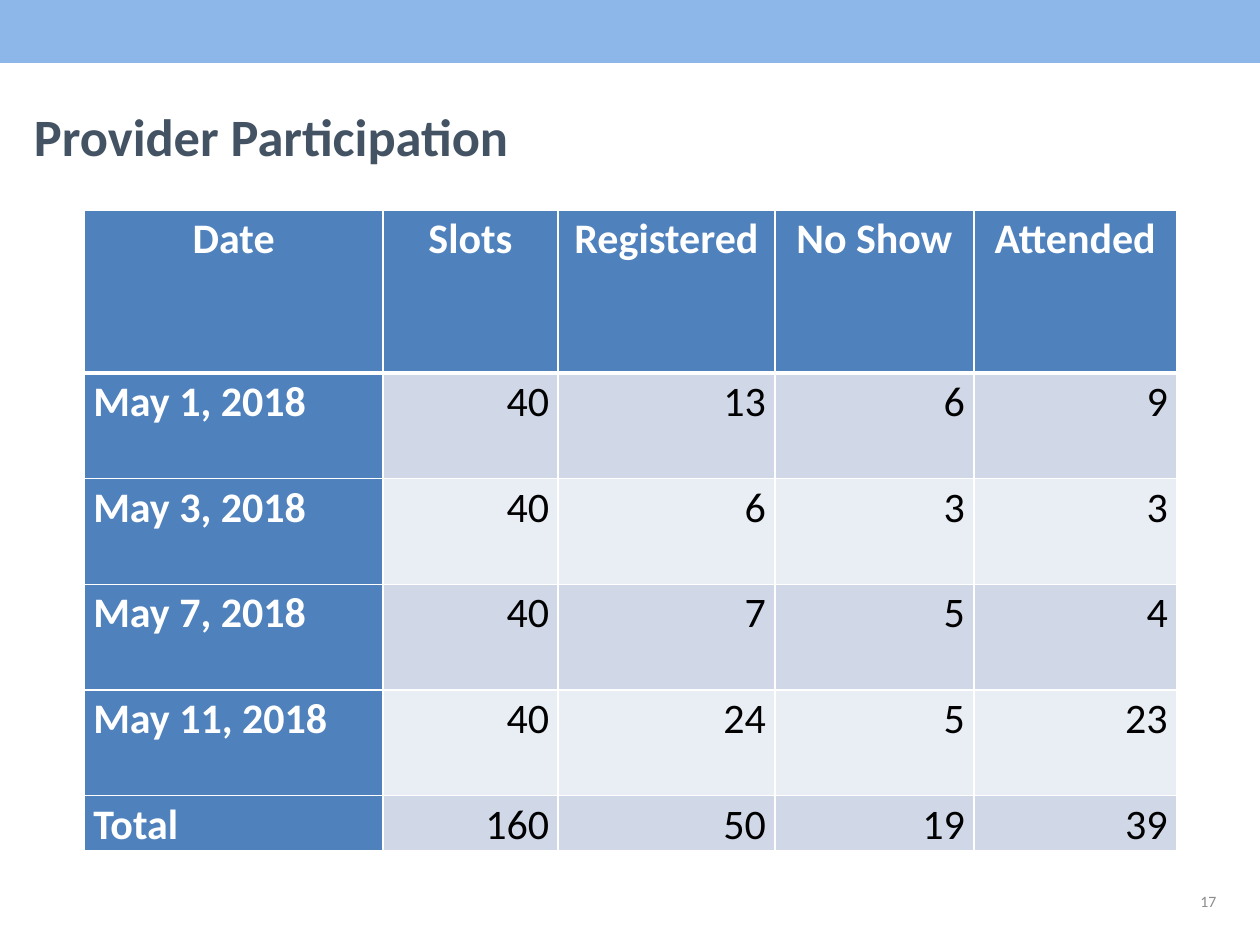
from dataclasses import dataclass

from lxml.etree import SubElement
from pptx import Presentation
from pptx.dml.color import RGBColor
from pptx.enum.shapes import MSO_SHAPE as Shape
from pptx.enum.text import MSO_ANCHOR as Anchor, PP_ALIGN as Align
from pptx.oxml.ns import qn
from pptx.util import Cm, Pt

FONT = "Calibri"
WHITE, BLACK, BLUE = "FFFFFF", "000000", "4F81BD"
BANDS = ("D0D8E8", "E9EDF4")
COL_WIDTHS = (6.02, 3.53, 4.37, 4.01, 4.09)
ROW_HEIGHTS = (3.28, 2.13, 2.13, 2.13, 2.13, 1.09)
ROWS = (
    ("Date", "Slots", "Registered", "No Show", "Attended"),
    ("May 1, 2018", 40, 13, 6, 9),
    ("May 3, 2018", 40, 6, 3, 3),
    ("May 7, 2018", 40, 7, 5, 4),
    ("May 11, 2018", 40, 24, 5, 23),
    ("Total", 160, 50, 19, 39),
)


@dataclass(frozen=True)
class TextStyle:
    size: float
    color: str
    bold: bool = False
    align: Align = Align.LEFT


@dataclass(frozen=True)
class CellStyle:
    text: TextStyle
    fill: str
    top: float = 1
    bottom: float = 1


def rgb(color: str) -> RGBColor:
    return RGBColor.from_string(color)


def write(tf, text: str, style: TextStyle):
    tf.text = text
    p = tf.paragraphs[0]
    p.alignment = style.align
    p.font.name = FONT
    p.font.size = Pt(style.size)
    p.font.bold = style.bold
    p.font.color.rgb = rgb(style.color)
    return p


def place(sp, left: float, top: float, width: float, height: float) -> None:
    sp.left, sp.top, sp.width, sp.height = map(Cm, (left, top, width, height))


def cell_style(row: int, col: int) -> CellStyle:
    if row == 0:
        return CellStyle(TextStyle(24, WHITE, True, Align.CENTER), BLUE, bottom=3)
    top = 3 if row == 1 else 1
    if col == 0:
        return CellStyle(TextStyle(24, WHITE, True), BLUE, top)
    return CellStyle(TextStyle(24, BLACK, align=Align.RIGHT), BANDS[(row - 1) % 2], top)


def draw_cell(cell, text: str, style: CellStyle) -> None:
    tc_pr = cell._tc.get_or_add_tcPr()
    for side, width in zip("LRTB", (1, 1, style.top, style.bottom)):
        ln = SubElement(tc_pr, qn(f"a:ln{side}"), w=str(Pt(width)))
        SubElement(SubElement(ln, qn("a:solidFill")), qn("a:srgbClr"), val=WHITE)
    cell.fill.solid()
    cell.fill.fore_color.rgb = rgb(style.fill)
    cell.margin_left = cell.margin_right = Cm(0.18)
    cell.margin_top = cell.margin_bottom = 0
    cell.vertical_anchor = Anchor.TOP
    write(cell.text_frame, text, style.text).line_spacing = 1.07


def draw_table(s) -> None:
    table = s.shapes.add_table(
        len(ROWS), len(COL_WIDTHS), Cm(1.7), Cm(4.24),
        Cm(sum(COL_WIDTHS)), Cm(sum(ROW_HEIGHTS)),
    ).table
    table.first_col = True
    for column, width in zip(table.columns, COL_WIDTHS):
        column.width = Cm(width)
    for row, height in zip(table.rows, ROW_HEIGHTS):
        row.height = Cm(height)
    for i, values in enumerate(ROWS):
        for j, value in enumerate(values):
            draw_cell(table.cell(i, j), str(value), cell_style(i, j))


def draw_banner(s) -> None:
    sp = s.shapes.add_shape(Shape.RECTANGLE, 0, 0, Cm(25.4), Cm(1.27))
    sp.shadow.inherit = False
    sp.fill.solid()
    sp.fill.fore_color.rgb = rgb("8CB7E8")
    sp.line.fill.background()


def draw_title(s) -> None:
    title = s.shapes.title
    place(title, 0.43, 1.9, 24.56, 1.9)
    tf = title.text_frame
    tf.vertical_anchor = Anchor.TOP
    tf.margin_top = Cm(0.19)
    write(tf, "Provider Participation", TextStyle(30, "435363", True))


def draw_page_number(s) -> None:
    sp = s.shapes.add_textbox(Cm(18.85), Cm(17.65), Cm(5.92), Cm(1.02))
    tf = sp.text_frame
    tf.word_wrap = True
    tf.vertical_anchor = Anchor.MIDDLE
    write(tf, "17", TextStyle(9, "8C8C8C", align=Align.RIGHT))


def main() -> None:
    prs = Presentation()
    prs.slide_width, prs.slide_height = Cm(25.4), Cm(19.05)
    s = prs.slides.add_slide(prs.slide_layouts[5])
    draw_banner(s)
    draw_title(s)
    draw_table(s)
    draw_page_number(s)
    prs.save("out.pptx")


if __name__ == "__main__":
    main()
